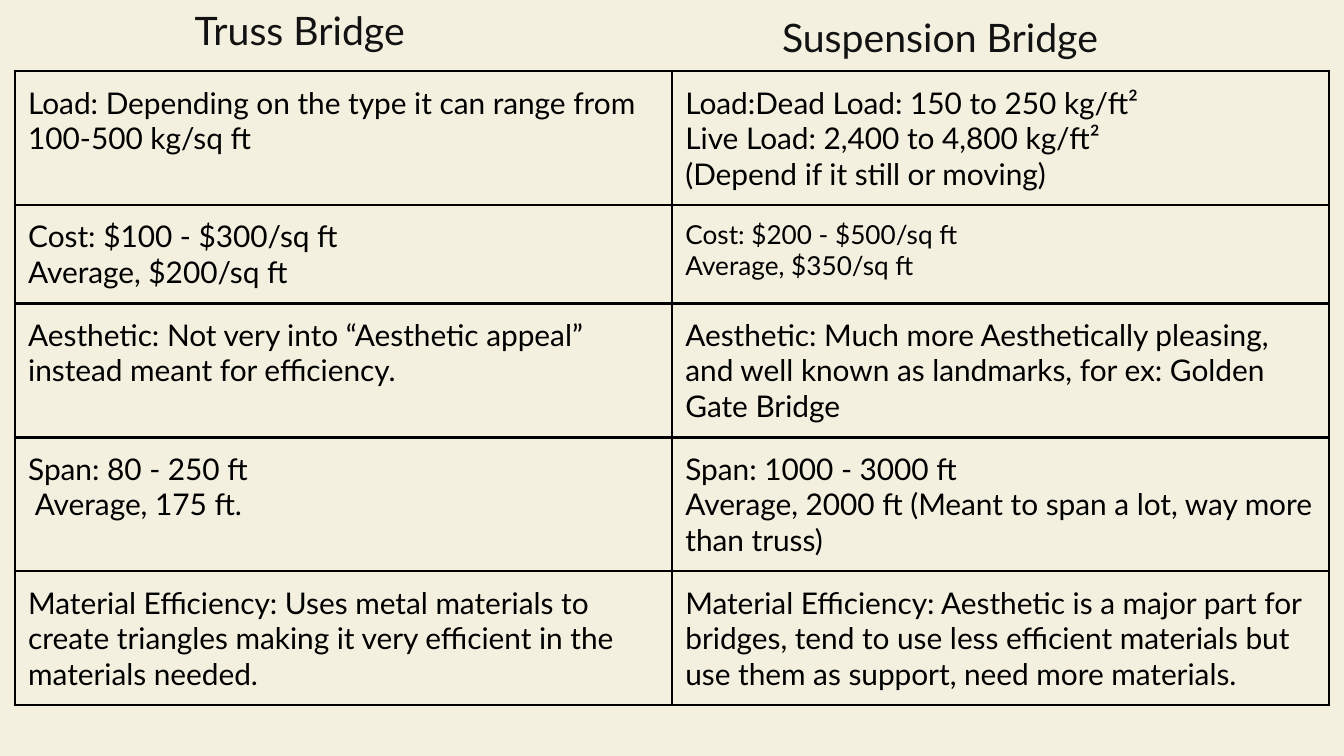
from lxml import etree
from pptx import Presentation
from pptx.dml.color import RGBColor
from pptx.oxml import ns
from pptx.util import Inches, Pt


def paint(fill, tint):
    fill.solid()
    fill.fore_color.rgb = RGBColor.from_string(tint)


def style(frame, size, tint):
    frame.word_wrap = True
    for para in frame.paragraphs:
        for run in para.runs:
            run.font.size = Pt(size)
            run.font.name = "Lato"
            paint(run.font.fill, tint)


deck = Presentation()
deck.slide_width = Inches(10)
deck.slide_height = Inches(10 * 9 / 16)
slide = deck.slides.add_slide(deck.slide_layouts[6])
paint(slide.background.fill, "F3F0DF")

rows = [
    (0.99, "Load: Depending on the type it can range from 100-500 kg/sq ft",
     "Load:Dead Load: 150 to 250 kg/ft²\nLive Load: 2,400 to 4,800 kg/ft²\n(Depend if it still or moving)"),
    (0.73, "Cost: $100 - $300/sq ft\nAverage, $200/sq ft",
     "Cost: $200 - $500/sq ft\nAverage, $350/sq ft"),
    (0.99, "Aesthetic: Not very into “Aesthetic appeal” instead meant for efficiency.",
     "Aesthetic: Much more Aesthetically pleasing, and well known as landmarks, for ex: Golden Gate Bridge"),
    (0.99, "Span: 80 - 250 ft\n Average, 175 ft.",
     "Span: 1000 - 3000 ft\nAverage, 2000 ft (Meant to span a lot, way more than truss)"),
    (0.99, "Material Efficiency: Uses metal materials to create triangles making it very efficient in the materials needed.",
     "Material Efficiency: Aesthetic is a major part for bridges, tend to use less efficient materials but use them as support, need more materials."),
]

high = sum(row[0] for row in rows)
grid = slide.shapes.add_table(
    len(rows), 2, Inches(0.11), Inches(0.53), Inches(9.78), Inches(high)).table
grid.first_row = False
grid.horz_banding = False
for col in grid.columns:
    col.width = Inches(4.89)

for r, (tall, *words) in enumerate(rows):
    grid.rows[r].height = Inches(tall)
    for c, word in enumerate(words):
        cell = grid.cell(r, c)
        cell.margin_left = cell.margin_right = Inches(0.1)
        cell.margin_top = cell.margin_bottom = Inches(0.1)
        cell.text_frame.text = word
        style(cell.text_frame, 14 if (r, c) == (1, 1) else 16, "000000")
        props = cell._tc.get_or_add_tcPr()
        for side in ("lnL", "lnR", "lnT", "lnB"):
            line = etree.SubElement(props, ns.qn("a:" + side), w=str(Pt(1.5)))
            solid = etree.SubElement(line, ns.qn("a:solidFill"))
            etree.SubElement(solid, ns.qn("a:srgbClr"), val="000000")
        cell.fill.background()

for left, top, wide, name in [
    (1.35, -0.05, 2.03, "Truss Bridge"),
    (5.72, 0, 2.92, "Suspension Bridge"),
]:
    box = slide.shapes.add_textbox(Inches(left), Inches(top), Inches(wide), Inches(0.53))
    frame = box.text_frame
    frame.margin_left = frame.margin_right = Inches(0.1)
    frame.margin_top = frame.margin_bottom = Inches(0.1)
    frame.text = name
    style(frame, 21, "121212")

deck.save("out.pptx")
